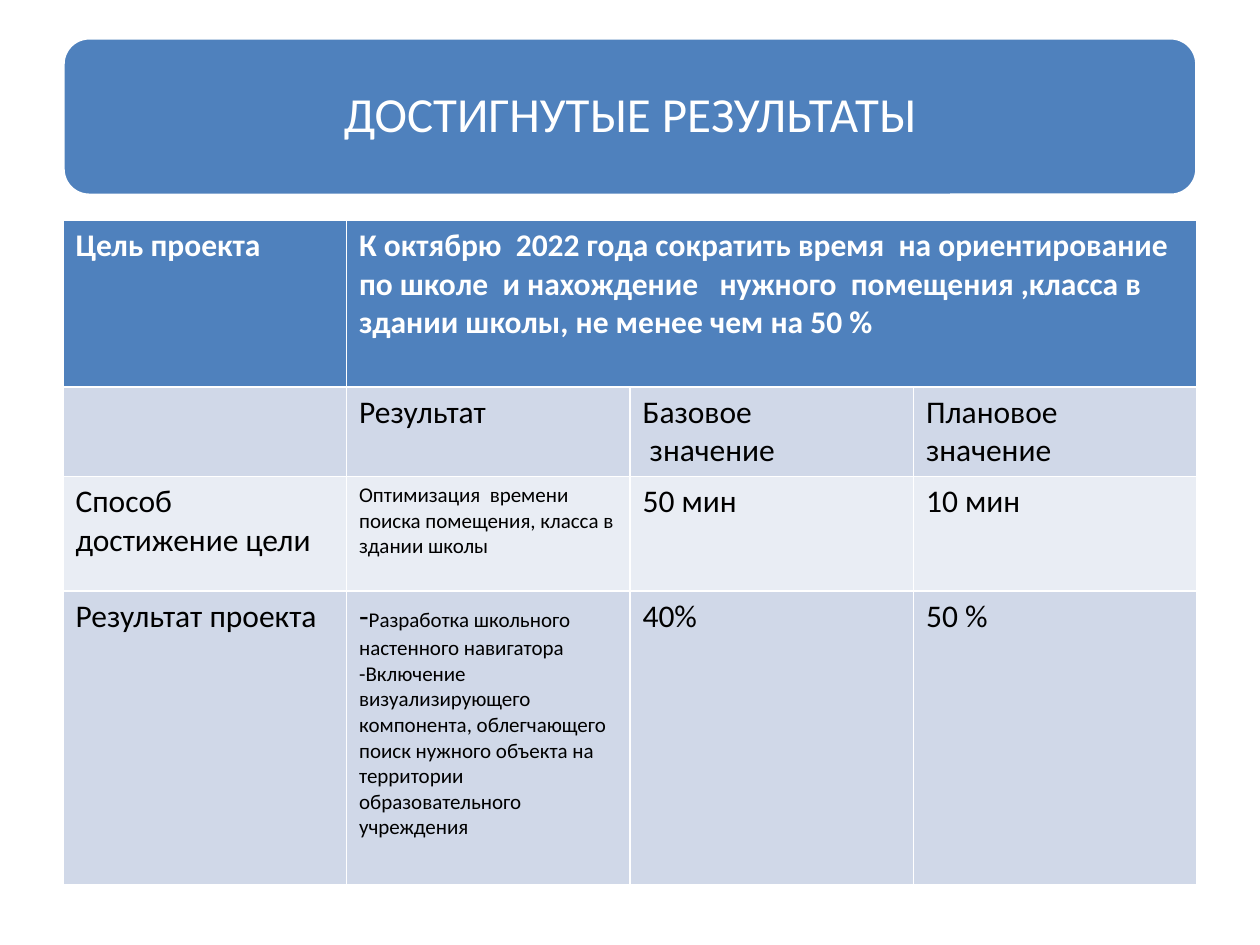
from pptx import Presentation
from pptx.dml.color import RGBColor
from pptx.enum.shapes import MSO_SHAPE
from pptx.enum.text import MSO_ANCHOR, PP_ALIGN
from pptx.util import Inches, Pt

ROUNDED = MSO_SHAPE.ROUNDED_RECTANGLE
MIDDLE = MSO_ANCHOR.MIDDLE
CENTER = PP_ALIGN.CENTER

WHITE = RGBColor(0xFF, 0xFF, 0xFF)
BLACK = RGBColor(0x00, 0x00, 0x00)
BLUE = RGBColor(0x4F, 0x81, 0xBD)
BAND_DARK = RGBColor(0xD0, 0xD8, 0xE8)
BAND_LIGHT = RGBColor(0xE9, 0xED, 0xF4)

TITLE = "ДОСТИГНУТЫЕ РЕЗУЛЬТАТЫ"
TITLE_FORMAT = {"name": "Calibri", "size": Pt(28)}
HEADER_FORMAT = {"name": "Calibri", "size": Pt(18), "bold": True}
BODY_FORMAT = {"name": "Calibri", "size": Pt(18), "bold": False}
DETAIL_FORMAT = {"name": "Calibri", "size": Pt(12), "bold": False}

GOAL = ("К октябрю  2022 года сократить время  на ориентирование  по школе  "
        "и нахождение   нужного  помещения ,класса в здании школы, "
        "не менее чем на 50 %")
OPTIMIZATION = "Оптимизация  времени поиска помещения, класса в здании школы"
NAVIGATOR = "Разработка школьного настенного навигатора"
VISUALS = ("-Включение визуализирующего компонента, облегчающего поиск нужного "
           "объекта на территории образовательного учреждения")


def single(text, text_format=BODY_FORMAT):
    return [[(text, text_format)]]


ROWS = [
    (1.32, BLUE, WHITE, [single("Цель проекта", HEADER_FORMAT),
                         single(GOAL, HEADER_FORMAT), [], []]),
    (0.71, BAND_DARK, BLACK, [[], single("Результат"),
                              single("Базовое") + single(" значение"),
                              single("Плановое значение")]),
    (0.91, BAND_LIGHT, BLACK, [single("Способ достижение цели"),
                               single(OPTIMIZATION, DETAIL_FORMAT),
                               single("50 мин"), single("10 мин")]),
    (2.33, BAND_DARK, BLACK, [single("Результат проекта"),
                              [[("-", BODY_FORMAT), (NAVIGATOR, DETAIL_FORMAT)],
                               [(VISUALS, DETAIL_FORMAT)]],
                              single("40%"), single("50 %")]),
]
LEFT, WIDTH, TABLE_TOP = 0.5, 9, 1.75


def apply_font(font, text_format, color):
    for attribute, value in text_format.items():
        setattr(font, attribute, value)
    font.color.rgb = color


def write_paragraphs(text_frame, paragraphs, color):
    for index, runs in enumerate(paragraphs):
        paragraph = text_frame.add_paragraph() if index else text_frame.paragraphs[0]
        for text, text_format in runs:
            run = paragraph.add_run()
            run.text = text
            apply_font(run.font, text_format, color)


def add_title(slide):
    banner = slide.shapes.add_shape(
        ROUNDED, Inches(LEFT), Inches(0.3), Inches(WIDTH), Inches(1.25))
    banner.shadow.inherit = False
    banner.fill.solid()
    banner.fill.fore_color.rgb = BLUE
    banner.line.color.rgb = WHITE
    banner.line.width = Pt(2)
    text_frame = banner.text_frame
    text_frame.word_wrap = True
    text_frame.vertical_anchor = MIDDLE
    write_paragraphs(text_frame, single(TITLE, TITLE_FORMAT), WHITE)
    text_frame.paragraphs[0].alignment = CENTER
    text_frame.paragraphs[0].line_spacing = 0.9


def add_results_table(slide):
    column_count = len(ROWS[0][3])
    table_height = sum(row[0] for row in ROWS)
    table = slide.shapes.add_table(
        len(ROWS), column_count, Inches(LEFT), Inches(TABLE_TOP),
        Inches(WIDTH), Inches(table_height)).table
    for column in table.columns:
        column.width = Inches(WIDTH / column_count)
    for row_index, (height, fill, color, contents) in enumerate(ROWS):
        table.rows[row_index].height = Inches(height)
        for column_index, paragraphs in enumerate(contents):
            cell = table.cell(row_index, column_index)
            cell.fill.solid()
            cell.fill.fore_color.rgb = fill
            write_paragraphs(cell.text_frame, paragraphs, color)
    table.cell(0, 1).merge(table.cell(0, column_count - 1))


def main():
    presentation = Presentation()
    presentation.slide_width = Inches(10)
    presentation.slide_height = Inches(7.5)
    slide = presentation.slides.add_slide(presentation.slide_layouts[6])
    add_title(slide)
    add_results_table(slide)
    presentation.save("out.pptx")


if __name__ == "__main__":
    main()
